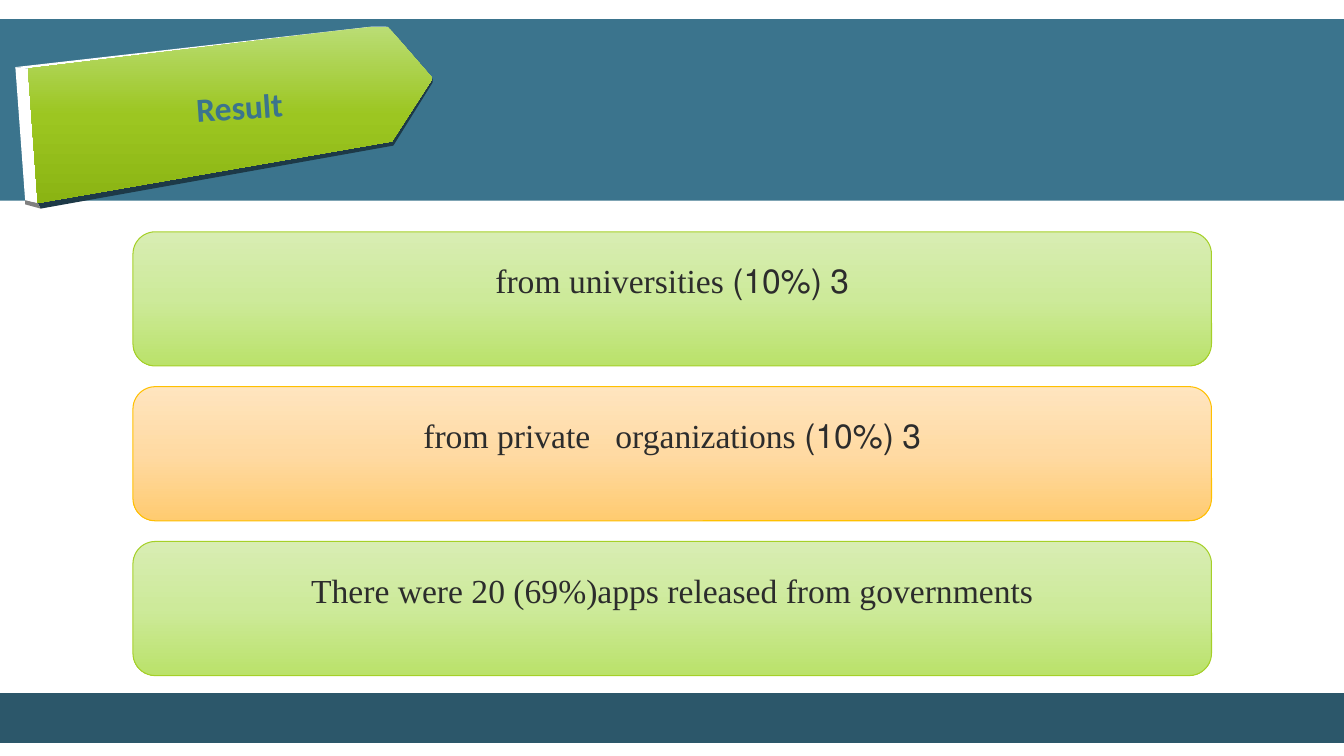
import copy
import dataclasses
import typing

import pptx
import pptx.dml.color
import pptx.enum.shapes
import pptx.enum.text
import pptx.oxml.ns
import pptx.shapes.autoshape
import pptx.slide
import pptx.util

Pt = pptx.util.Pt
Point = tuple[float, float]


@dataclasses.dataclass(frozen=True)
class Theme:
    header: str = "3B748D"
    footer: str = "2C576A"
    white: str = "FFFFFF"
    ink: str = "2C2C2C"
    arrow_shade: str = "1D3947"
    arrow_corner: str = "808080"
    arrow_face: tuple[str, ...] = ("BADD75", "9CC621", "8BB413")
    green: tuple[str, ...] = ("D8EDB3", "CDEA9A", "BAE26A")
    green_line: str = "A5D028"
    orange: tuple[str, ...] = ("FFE5BF", "FFDAA3", "FFCB70")
    orange_line: str = "FFC000"
    title_font: str = "Calibri"
    body_font: str = "Times New Roman"
    text_size: float = 24
    line_width: float = 0.75


THEME = Theme()


@dataclasses.dataclass(frozen=True)
class Band:
    left: float
    top: float
    width: float
    height: float
    fill: str
    line: str | None = None


@dataclasses.dataclass(frozen=True)
class Finding:
    text: str
    fill: tuple[str, ...]
    line: str


@dataclasses.dataclass(frozen=True)
class ArrowFacet:
    points: tuple[Point, ...]
    fill: str | tuple[str, ...]


BANDS = (
    Band(0, 13.7, 960, 129.6, THEME.header),
    Band(-1.4, 494.8, 962, 36, THEME.footer, THEME.white),
)

FINDINGS = (
    Finding("3 (10%) from universities", THEME.green, THEME.green_line),
    Finding("3 (10%) from private   organizations", THEME.orange, THEME.orange_line),
    Finding("There were 20 (69%)apps released from governments", THEME.green, THEME.green_line),
)
FINDING_LEFT, FINDING_TOP = 95, 165.6
FINDING_WIDTH, FINDING_HEIGHT = 770.4, 95.8
FINDING_PITCH = 110.6

BACK_TOP, BACK_BOTTOM = (10.7, 47.9), (17.9, 143)
FACE_TOP, FACE_BOTTOM = (20, 48.6), (27.1, 145)
FACE_SHOULDER, FACE_TIP, FACE_HEEL = (277, 19.3), (308.6, 56.4), (280, 100.7)
UNDER_BOTTOM = (28.6, 149.3)

ARROW_FACETS = (
    ArrowFacet((FACE_BOTTOM, FACE_HEEL, FACE_TIP, (308.6, 58.6), (280.7, 104.3), UNDER_BOTTOM),
               THEME.arrow_shade),
    ArrowFacet((BACK_BOTTOM, FACE_BOTTOM, UNDER_BOTTOM, (17.9, 146.4)), THEME.arrow_corner),
    ArrowFacet((BACK_TOP, (266.4, 18.6), FACE_SHOULDER, FACE_TOP), THEME.white),
    ArrowFacet((BACK_TOP, FACE_TOP, FACE_BOTTOM, BACK_BOTTOM), THEME.white),
    ArrowFacet((FACE_TOP, (266.4, 19.3), FACE_SHOULDER, FACE_TIP, FACE_HEEL, FACE_BOTTOM),
               THEME.arrow_face),
)


def rgb(value: str) -> pptx.dml.color.RGBColor:
    return pptx.dml.color.RGBColor.from_string(value)


def apply_format(target: typing.Any, values: dict[str, typing.Any]) -> None:
    for name, value in values.items():
        setattr(target, name, value)


def paint(shape: pptx.shapes.autoshape.Shape, fill: str | tuple[str, ...],
          line: str | None = None) -> None:
    shape.shadow.inherit = False
    if isinstance(fill, str):
        shape.fill.solid()
        shape.fill.fore_color.rgb = rgb(fill)
    else:
        shape.fill.gradient()
        shape.fill.gradient_angle = 270
        stop_list = shape._element.spPr.find(".//" + pptx.oxml.ns.qn("a:gsLst"))
        stop_list.insert(1, copy.deepcopy(stop_list[0]))
        for index, (stop, colour) in enumerate(zip(shape.fill.gradient_stops, fill)):
            stop.position = index / (len(fill) - 1)
            stop.color.rgb = rgb(colour)
    if line is None:
        shape.line.fill.background()
    else:
        shape.line.color.rgb = rgb(line)
        shape.line.width = Pt(THEME.line_width)


def draw_band(slide: pptx.slide.Slide, band: Band) -> None:
    shape = slide.shapes.add_shape(
        pptx.enum.shapes.MSO_SHAPE.RECTANGLE,
        Pt(band.left), Pt(band.top), Pt(band.width), Pt(band.height))
    paint(shape, band.fill, band.line)


def draw_finding(slide: pptx.slide.Slide, finding: Finding, row: int) -> None:
    card = slide.shapes.add_shape(
        pptx.enum.shapes.MSO_SHAPE.ROUNDED_RECTANGLE,
        Pt(FINDING_LEFT), Pt(FINDING_TOP + row * FINDING_PITCH),
        Pt(FINDING_WIDTH), Pt(FINDING_HEIGHT))
    paint(card, finding.fill, finding.line)
    apply_format(card.text_frame, {
        "word_wrap": True,
        "vertical_anchor": pptx.enum.text.MSO_ANCHOR.MIDDLE,
        "margin_top": Pt(7.2),
        "margin_bottom": Pt(30),
    })
    paragraph = card.text_frame.paragraphs[0]
    paragraph.text = finding.text
    apply_format(paragraph, {
        "alignment": pptx.enum.text.PP_ALIGN.CENTER,
        "line_spacing": 0.9,
    })
    paragraph._p.get_or_add_pPr().set("rtl", "1")
    font = paragraph.runs[0].font
    apply_format(font, {"name": THEME.body_font, "size": Pt(THEME.text_size)})
    font.color.rgb = rgb(THEME.ink)


def draw_facet(slide: pptx.slide.Slide, facet: ArrowFacet) -> None:
    start, *rest = facet.points
    outline = slide.shapes.build_freeform(*start, scale=Pt(1))
    outline.add_line_segments(rest, close=True)
    paint(outline.convert_to_shape(), facet.fill)


def place_title(slide: pptx.slide.Slide) -> None:
    title = slide.shapes.title
    apply_format(title, {
        "left": Pt(40), "top": Pt(51), "width": Pt(262), "height": Pt(50), "rotation": -4,
    })
    apply_format(title.text_frame, {
        "text": "Result",
        "word_wrap": True,
        "auto_size": pptx.enum.text.MSO_AUTO_SIZE.NONE,
        "vertical_anchor": pptx.enum.text.MSO_ANCHOR.MIDDLE,
    })
    paragraph = title.text_frame.paragraphs[0]
    paragraph.alignment = pptx.enum.text.PP_ALIGN.CENTER
    font = paragraph.runs[0].font
    apply_format(font, {"name": THEME.title_font, "size": Pt(THEME.text_size), "bold": True})
    font.color.rgb = rgb(THEME.header)
    slide.shapes._spTree.append(title._element)


def main() -> None:
    presentation = pptx.Presentation()
    apply_format(presentation, {"slide_width": Pt(960), "slide_height": Pt(540)})
    slide = presentation.slides.add_slide(presentation.slide_layouts[5])
    for band in BANDS:
        draw_band(slide, band)
    for row, finding in enumerate(FINDINGS):
        draw_finding(slide, finding, row)
    for facet in ARROW_FACETS:
        draw_facet(slide, facet)
    place_title(slide)
    presentation.save("out.pptx")


if __name__ == "__main__":
    main()
